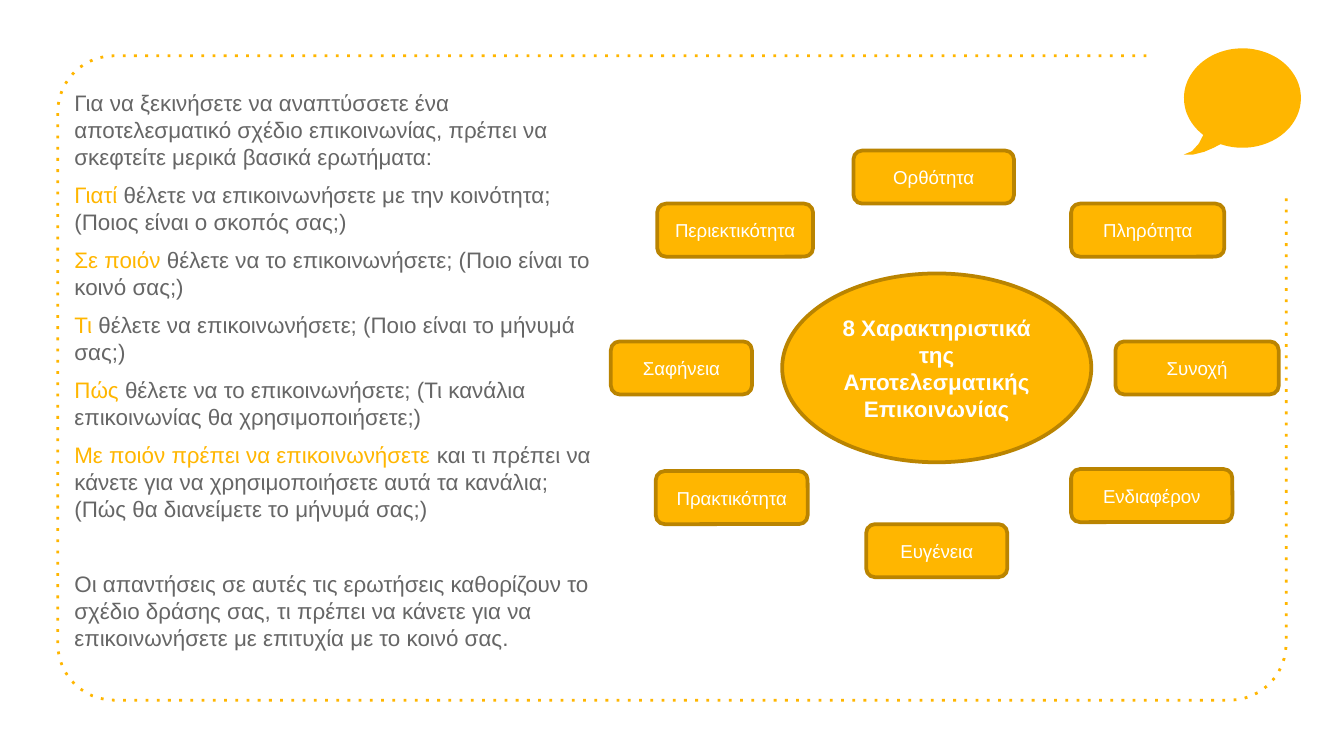
import math
from typing import NamedTuple

from lxml import etree
from pptx import Presentation
from pptx import util as u
from pptx.dml.color import RGBColor
from pptx.enum import shapes, text
from pptx.oxml import ns

PX = 4572  # EMU per px, 200 px to the inch


class Theme(NamedTuple):
    font: str = "Arial"
    accent: RGBColor = RGBColor(0xFF, 0xB6, 0x00)
    edge: RGBColor = RGBColor(0xBA, 0x84, 0x00)
    body: RGBColor = RGBColor(0x66, 0x66, 0x66)
    white: RGBColor = RGBColor(0xFF, 0xFF, 0xFF)
    body_size: int = 12
    label_size: int = 10


class Question(NamedTuple):
    lead: str
    rest: str
    before: int = 6  # points above the paragraph


class Trait(NamedTuple):
    label: str
    x: int
    y: int
    w: int


THEME = Theme()
TRAIT_H = 79

QUESTIONS = [
    Question("", "Για να ξεκινήσετε να αναπτύσσετε ένα αποτελεσματικό σχέδιο "
             "επικοινωνίας, πρέπει να σκεφτείτε μερικά βασικά ερωτήματα:"),
    Question("Γιατί", " θέλετε να επικοινωνήσετε με την κοινότητα; "
             "(Ποιος είναι ο σκοπός σας;)"),
    Question("Σε ποιόν", " θέλετε να το επικοινωνήσετε; (Ποιο είναι το κοινό σας;)"),
    Question("Τι", " θέλετε να επικοινωνήσετε; (Ποιο είναι το μήνυμά σας;)"),
    Question("Πώς", " θέλετε να το επικοινωνήσετε; "
             "(Τι κανάλια επικοινωνίας θα χρησιμοποιήσετε;)"),
    Question("Με ποιόν πρέπει να επικοινωνήσετε ",
             "και τι πρέπει να κάνετε για να χρησιμοποιήσετε αυτά τα κανάλια; "
             "(Πώς θα διανείμετε το μήνυμά σας;)"),
    Question("", "Οι απαντήσεις σε αυτές τις ερωτήσεις καθορίζουν το σχέδιο δράσης "
             "σας, τι πρέπει να κάνετε για να επικοινωνήσετε με επιτυχία με το "
             "κοινό σας.", before=26),
]

TRAITS = [
    Trait("Περιεκτικότητα", 978, 303, 232),
    Trait("Ορθότητα", 1270, 224, 239),
    Trait("Πληρότητα", 1594, 303, 228),
    Trait("Συνοχή", 1660, 508, 243),
    Trait("Ενδιαφέρον", 1594, 698, 240),
    Trait("Πρακτικότητα", 976, 701, 226),
    Trait("Σαφήνεια", 909, 508, 210),
    Trait("Ευγένεια", 1289, 780, 210),
]


def px(n: float) -> int:
    return round(n * PX)


def arc(cx: int, cy: int, rx: int, ry: int,
        start: int, end: int, steps: int) -> list[tuple[float, float]]:
    """Points on an ellipse; degrees run clockwise from the right."""
    angles = [math.radians(start + (end - start) * i / steps) for i in range(steps + 1)]
    return [(cx + rx * math.cos(a), cy + ry * math.sin(a)) for a in angles]


def add_outline(slide, points: list[tuple[float, float]], close: bool):
    pts = [(px(x), px(y)) for x, y in points]
    fb = slide.shapes.build_freeform(*pts[0], scale=1.0)
    fb.add_line_segments(pts[1:], close=close)
    sp = fb.convert_to_shape()
    sp.shadow.inherit = False
    return sp


def add_frame(slide) -> None:
    left, top, right, bottom, r = 86, 83, 1914, 1042, 84
    points = [(1706, top)]
    points += arc(left + r, top + r, r, r, 270, 180, 12)
    points += arc(left + r, bottom - r, r, r, 180, 90, 12)
    points += arc(right - r, bottom - r, r, r, 90, 0, 12)
    points.append((right, 292))
    sp = add_outline(slide, points, close=False)
    sp.fill.background()
    sp.line.color.rgb = THEME.accent
    sp.line.width = u.Pt(1.5)
    dash = etree.SubElement(sp.line._get_or_add_ln(), ns.qn("a:prstDash"))
    dash.set("val", "dot")


def add_bubble(slide) -> None:
    tail = [(1806, 220), (1792, 226), (1776, 230), (1762, 230), (1774, 225), (1784, 214)]
    sp = add_outline(slide, arc(1849, 146, 87, 74, 132, 472, 90) + tail, close=True)
    sp.fill.solid()
    sp.fill.fore_color.rgb = THEME.accent
    sp.line.fill.background()


def style_run(r, size: int, color: RGBColor, bold: bool = False) -> None:
    r.font.name = THEME.font
    r.font.size = u.Pt(size)
    r.font.color.rgb = color
    r.font.bold = bold


def add_questions(slide, questions: list[Question]) -> None:
    tf = slide.shapes.add_textbox(px(91), px(113), px(822), px(876)).text_frame
    tf.word_wrap = True
    tf.margin_left = tf.margin_right = tf.margin_top = tf.margin_bottom = px(20)
    for i, q in enumerate(questions):
        p = tf.add_paragraph() if i else tf.paragraphs[0]
        p.space_before = u.Pt(q.before)
        for words, color in ((q.lead, THEME.accent), (q.rest, THEME.body)):
            if words:
                r = p.add_run()
                r.text = words
                style_run(r, THEME.body_size, color)


def add_node(slide, kind, label: str, x: int, y: int, w: int, h: int,
             size: int, bold: bool = False) -> None:
    sp = slide.shapes.add_shape(kind, px(x), px(y), px(w), px(h))
    sp.shadow.inherit = False
    sp.fill.solid()
    sp.fill.fore_color.rgb = THEME.accent
    sp.line.color.rgb = THEME.edge
    sp.line.width = u.Pt(2)
    tf = sp.text_frame
    tf.word_wrap = True
    tf.vertical_anchor = text.MSO_ANCHOR.MIDDLE
    tf.text = label
    p = tf.paragraphs[0]
    p.alignment = text.PP_ALIGN.CENTER
    style_run(p.runs[0], size, THEME.white, bold)


def main() -> None:
    prs = Presentation()
    prs.slide_width, prs.slide_height = px(2000), px(1125)
    s = prs.slides.add_slide(prs.slide_layouts[6])

    # Dotted frame, questions and speech bubble
    add_frame(s)
    add_questions(s, QUESTIONS)
    add_bubble(s)

    # Central topic with its eight traits
    add_node(s, shapes.MSO_SHAPE.OVAL,
             "8 Χαρακτηριστικά της Αποτελεσματικής Επικοινωνίας",
             1164, 407, 460, 281, THEME.body_size, bold=True)
    for t in TRAITS:
        add_node(s, shapes.MSO_SHAPE.ROUNDED_RECTANGLE, t.label,
                 t.x, t.y, t.w, TRAIT_H, THEME.label_size)

    prs.save("out.pptx")


if __name__ == "__main__":
    main()
